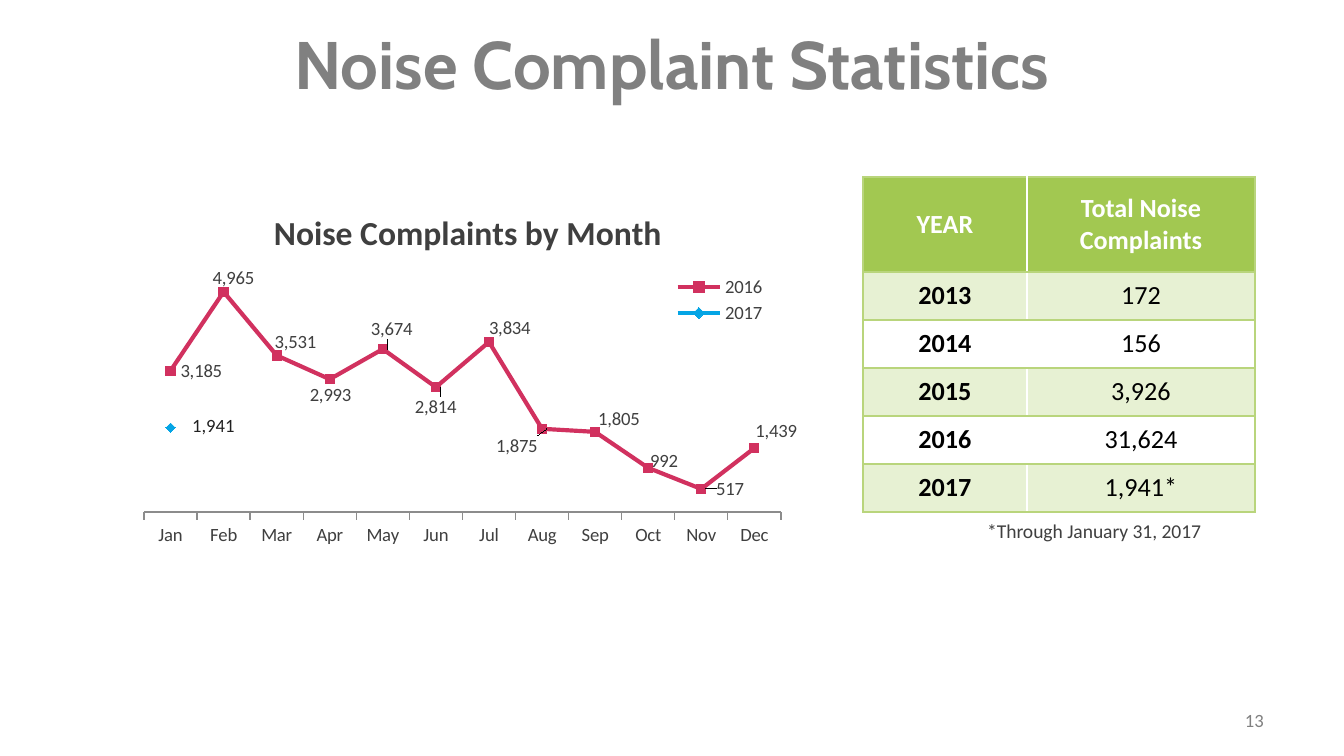
"""Build the noise complaint statistics slide: a monthly line chart and a yearly table."""
from pptx import Presentation, util as u
from pptx.chart.data import CategoryChartData
from pptx.dml.color import RGBColor
from pptx.enum import chart as ch, text as t
from pptx.oxml import parse_xml
from pptx.oxml.ns import nsdecls

PX = 914400 / 134.4
COLORS = {
    "gray": "808080", "text": "3F3F3F", "dark": "202020", "black": "000000",
    "white": "FFFFFF", "header": "A2C851", "band": "E7F1D3", "border": "B9D57C",
    "2016": "D1315F", "2017": "05A5E5", "axis": "8C8C8C",
}
CENTER, RIGHT, LEFT = t.PP_ALIGN.CENTER, t.PP_ALIGN.RIGHT, t.PP_ALIGN.LEFT
MIDDLE, TOP = t.MSO_ANCHOR.MIDDLE, t.MSO_ANCHOR.TOP

TITLE = "Noise Complaint Statistics"
CHART_TITLE = "Noise Complaints by Month"
MONTHS = "Jan Feb Mar Apr May Jun Jul Aug Sep Oct Nov Dec".split()
SERIES = {
    "2016": [3185, 4965, 3531, 2993, 3674, 2814, 3834, 1875, 1805, 992, 517, 1439],
    "2017": [1900] + [None] * 11,
}
MARKERS = {"2016": ch.XL_MARKER_STYLE.SQUARE, "2017": ch.XL_MARKER_STYLE.DIAMOND}
LABEL_SHIFTS = [(0, 0), (-21, -14), (-12, -13), (-30, 16), (-22, -20), (-31, 20),
                (-10, -14), (-56, 17), (-7, -13), (-8, -7), (5, 0), (-9, -17)]
ROWS = [("YEAR", "Total Noise Complaints"), ("2013", "172"), ("2014", "156"),
        ("2015", "3,926"), ("2016", "31,624"), ("2017", "1,941*")]
COL_WIDTHS = [164, 228]
ROW_HEIGHTS = [95] + [48] * 5
TABLE_AT = (863, 177, sum(COL_WIDTHS), sum(ROW_HEIGHTS))
CHART_AT = (124, 181, 679, 378)
PLOT_AT = (20, 65, 637, 266)
LEGEND_AT = (548, 90, 96, 58)
CHART_TITLE_AT = (144, 22)
BOXES = [
    ("13", (964, 700, 313, 40), 10, "gray", RIGHT, MIDDLE, 0),
    ("*Through January 31, 2017", (974, 512, 280, 48), 10.5, "text", LEFT, TOP, 5),
    ("1,941", (179, 407, 134, 38), 10, "dark", LEFT, TOP, 0),
]


def px(n):
    return u.Emu(round(n * PX))


def rgb(name):
    return RGBColor.from_string(COLORS[name])


def style(font, size, color, bold=False, name="Calibri"):
    font.size, font.bold, font.name = u.Pt(size), bold, name
    font.color.rgb = rgb(color)


def write(tf, text, size, color, align, bold=False, name="Calibri", gap=0):
    p = tf.paragraphs[0]
    p.alignment = align
    p.space_before = p.space_after = u.Pt(gap)
    r = p.add_run()
    r.text = text
    style(r.font, size, color, bold, name)


def layout(at, mode=None, inner=False):
    """Return a manual chart layout for a place given in px inside the chart."""
    parts = ['<c:layoutTarget val="inner"/>'] if inner else []
    if mode:
        parts += [f'<c:{k}Mode val="{mode}"/>' for k in "xy"]
    parts += [f'<c:{k} val="{n / CHART_AT[2 + i % 2]:.4f}"/>'
              for i, (k, n) in enumerate(zip("xywh", at))]
    return parse_xml(f'<c:layout {nsdecls("c")}><c:manualLayout>{"".join(parts)}'
                     '</c:manualLayout></c:layout>')


def place(parent, before, new):
    for old in parent.xpath("c:layout"):
        parent.remove(old)
    parent.xpath(before)[0].addprevious(new)


def add_chart(s):
    data = CategoryChartData(number_format="#,##0")
    data.categories = MONTHS
    for name, values in SERIES.items():
        data.add_series(name, values)
    chart = s.shapes.add_chart(ch.XL_CHART_TYPE.LINE_MARKERS, *map(px, CHART_AT), data).chart
    style(chart.font, 10, "text")
    chart.has_title = True
    write(chart.chart_title.text_frame, CHART_TITLE, 18, "text", CENTER, True)
    place(chart.chart_title._element, "c:overlay", layout(CHART_TITLE_AT, "edge"))
    chart.has_legend = True
    chart.legend.position = ch.XL_LEGEND_POSITION.RIGHT
    chart.legend.include_in_layout = True
    place(chart.legend._element, "c:overlay", layout(LEGEND_AT, "edge"))
    area = chart._chartSpace.xpath("c:chart/c:plotArea")[0]
    place(area, "c:lineChart", layout(PLOT_AT, "edge", True))

    val, cat = chart.value_axis, chart.category_axis
    val.minimum_scale, val.maximum_scale = 0, 6000
    val.has_major_gridlines = val.visible = False
    cat.major_tick_mark = ch.XL_TICK_MARK.OUTSIDE
    cat.format.line.color.rgb = rgb("axis")
    cat.format.line.width = u.Pt(0.75)

    chart.plots[0].vary_by_categories = False
    for ser in chart.plots[0].series:
        ser.smooth = False
        ser.format.line.color.rgb = rgb(ser.name)
        ser.format.line.width = u.Pt(2.25)
        ser.marker.style, ser.marker.size = MARKERS[ser.name], 5
        ser.marker.format.fill.solid()
        ser.marker.format.fill.fore_color.rgb = rgb(ser.name)
        ser.marker.format.line.color.rgb = rgb(ser.name)

    monthly = chart.plots[0].series[0]
    labels = monthly.data_labels
    labels.show_value = True
    labels.number_format, labels.number_format_is_linked = "#,##0", False
    for i, shift in enumerate(LABEL_SHIFTS):
        monthly.points[i].data_label.position = ch.XL_LABEL_POSITION.RIGHT
        label = monthly._element.xpath(f'c:dLbls/c:dLbl[c:idx/@val="{i}"]')[0]
        label.xpath("c:idx")[0].addnext(layout(shift))


def add_borders(cell, sides):
    pr = cell._tc.get_or_add_tcPr()
    for i, side in enumerate(sides):
        pr.insert(i, parse_xml(
            f'<a:ln{side} {nsdecls("a")} w="12700"><a:solidFill>'
            f'<a:srgbClr val="{COLORS["border"]}"/></a:solidFill></a:ln{side}>'))


def add_table(s):
    table = s.shapes.add_table(len(ROWS), len(COL_WIDTHS), *map(px, TABLE_AT)).table
    for col, w in zip(table.columns, COL_WIDTHS):
        col.width = px(w)
    for i, (row, h) in enumerate(zip(ROWS, ROW_HEIGHTS)):
        table.rows[i].height = px(h)
        for j, text in enumerate(row):
            cell = table.cell(i, j)
            cell.vertical_anchor = MIDDLE
            cell.margin_left = cell.margin_right = px(9)
            cell.margin_top = cell.margin_bottom = 0
            write(cell.text_frame, text, 14, "black" if i else "white", CENTER, i == 0 or j == 0)
            if i and i % 2 == 0:
                cell.fill.background()
            else:
                cell.fill.solid()
                cell.fill.fore_color.rgb = rgb("band" if i else "header")
            add_borders(cell, "RTB" if j else "LTB")


def main():
    prs = Presentation()
    prs.slide_width, prs.slide_height = px(1344), px(756)
    s = prs.slides.add_slide(prs.slide_layouts[5])
    title = s.shapes.title
    title.left, title.top, title.width, title.height = map(px, (0, 0, 1344, 126))
    title.text_frame.vertical_anchor = MIDDLE
    write(title.text_frame, TITLE, 36, "gray", CENTER, True, "Cabin")
    add_table(s)
    add_chart(s)
    for text, at, size, color, align, anchor, gap in BOXES:
        tf = s.shapes.add_textbox(*map(px, at)).text_frame
        tf.word_wrap, tf.vertical_anchor = True, anchor
        write(tf, text, size, color, align, gap=gap)
    prs.save("out.pptx")


if __name__ == "__main__":
    main()
